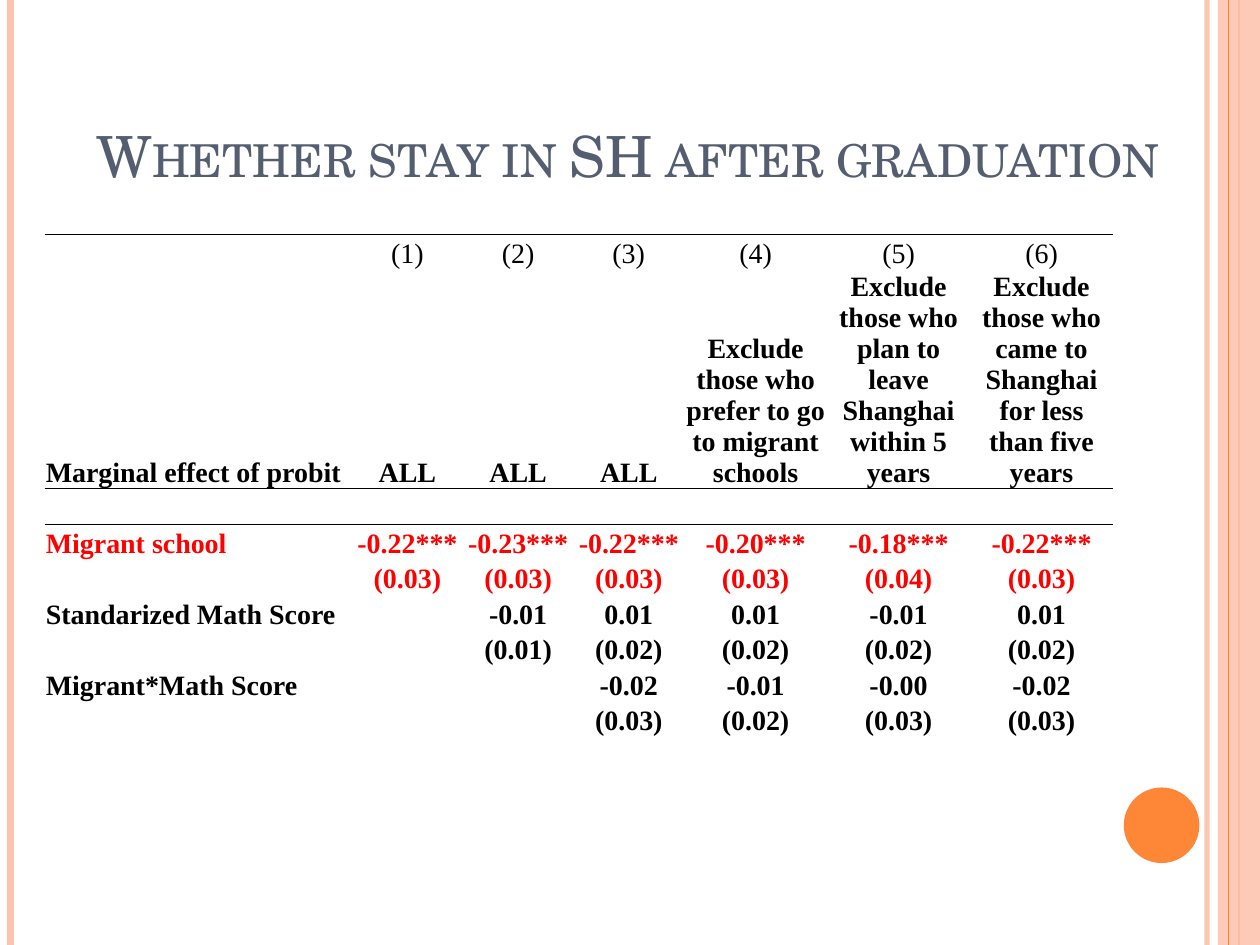
"""Build the slide on whether pupils stay in SH after graduation."""
from dataclasses import dataclass
from typing import Any

from lxml.etree import SubElement
from pptx import Presentation
from pptx.dml.color import RGBColor
from pptx.enum.shapes import MSO_CONNECTOR, MSO_SHAPE
from pptx.enum.text import MSO_ANCHOR, MSO_AUTO_SIZE, PP_ALIGN
from pptx.oxml import parse_xml
from pptx.oxml.ns import nsdecls, qn
from pptx.util import Pt


@dataclass(frozen=True)
class Theme:
    """Colours, fonts and type sizes."""
    pink: str = "FEC3AE"
    orange: str = "FE8637"
    slate: str = "545E70"
    black: str = "000000"
    red: str = "FF0000"
    head: str = "TeX Gyre Schola"
    body: str = "Times New Roman"
    large: float = 32.4
    small: float = 16


@dataclass(frozen=True)
class Rule:
    """A line from the top to the foot of the slide."""
    x: float
    color: str
    width: float
    alpha: int = 100


@dataclass(frozen=True)
class Row:
    """One table row with its style and border."""
    cells: tuple[str, ...]
    color: str
    bold: bool = True
    height: float = 20.16
    edge: str = ""


THEME = Theme()
WIDE, HIGH = 720, 540
BLANK = ("",)
COLS = (175.7,) + (63.25,) * 3 + (81.7,) * 3
RULES = (
    Rule(689.8, THEME.pink, 3, 93),
    Rule(6, THEME.pink, 4.5),
    Rule(708, THEME.orange, 1.5),
)
EDGE_RULE = Rule(702, THEME.orange, 0.75)
ROWS = (
    Row(BLANK + tuple(f"({n})" for n in range(1, 7)), THEME.black, bold=False, edge="T"),
    Row(("Marginal effect of probit", "ALL", "ALL", "ALL",
         "Exclude those who prefer to go to migrant schools",
         "Exclude those who plan to leave Shanghai within 5 years",
         "Exclude those who came to Shanghai for less than five years"),
        THEME.black, height=107.3, edge="B"),
    Row(BLANK * 7, THEME.black, edge="T"),
    Row(("Migrant school", "-0.22***", "-0.23***", "-0.22***",
         "-0.20***", "-0.18***", "-0.22***"), THEME.red),
    Row(("", "(0.03)", "(0.03)", "(0.03)", "(0.03)", "(0.04)", "(0.03)"), THEME.red),
    Row(("Standarized Math Score", "", "-0.01", "0.01", "0.01", "-0.01", "0.01"), THEME.black),
    Row(("", "", "(0.01)", "(0.02)", "(0.02)", "(0.02)", "(0.02)"), THEME.black),
    Row(("Migrant*Math Score", "", "", "-0.02", "-0.01", "-0.00", "-0.02"), THEME.black),
    Row(("", "", "", "(0.03)", "(0.02)", "(0.03)", "(0.03)"), THEME.black),
)


def fade(part: Any, alpha: int) -> None:
    """Set the opacity of a solid colour, in per cent."""
    if alpha < 100:
        color = next(part.iter(qn("a:srgbClr")))
        SubElement(color, qn("a:alpha"), val=str(alpha * 1000))


def write(frame: Any, text: str, *, font: str, size: float, color: str,
          bold: bool = False, caps: bool = False, align: PP_ALIGN = PP_ALIGN.LEFT) -> None:
    """Put one formatted paragraph in a text frame."""
    para = frame.paragraphs[0]
    para.alignment = align
    if not text:
        SubElement(para._p, qn("a:endParaRPr"), sz=str(int(size * 100)))
        return
    run = para.add_run()
    run.text = text
    run.font.name, run.font.size, run.font.bold = font, Pt(size), bold
    run.font.color.rgb = RGBColor.from_string(color)
    if caps:
        run.font._element.set("cap", "small")


def draw_rule(slide: Any, rule: Rule) -> Any:
    """Draw one upright line."""
    line = slide.shapes.add_connector(
        MSO_CONNECTOR.STRAIGHT, Pt(rule.x), 0, Pt(rule.x), Pt(HIGH))
    line.line.color.rgb = RGBColor.from_string(rule.color)
    line.line.width = Pt(rule.width)
    props = line._element.spPr
    fade(props, rule.alpha)
    SubElement(props, qn("a:effectLst"))
    return line


def draw_shape(slide: Any, kind: MSO_SHAPE, box: tuple[float, ...],
               color: str, alpha: int = 100) -> Any:
    """Draw a filled shape with no outline."""
    shape = slide.shapes.add_shape(kind, *map(Pt, box))
    shape.shadow.inherit = False
    shape.fill.solid()
    shape.fill.fore_color.rgb = RGBColor.from_string(color)
    shape.line.fill.background()
    fade(shape._element.spPr, alpha)
    return shape


def draw_edge(cell: Any, side: str) -> None:
    """Rule one side of a cell, T for top or B for bottom."""
    cell._tc.get_or_add_tcPr().insert(0, parse_xml(
        f'<a:ln{side} {nsdecls("a")} w="6350"><a:solidFill>'
        f'<a:srgbClr val="{THEME.black}"/></a:solidFill></a:ln{side}>'))


def draw_table(slide: Any, rows: tuple[Row, ...]) -> None:
    """Draw the table of results."""
    table = slide.shapes.add_table(
        len(rows), len(COLS), Pt(25.5), Pt(133.9), Pt(sum(COLS)),
        Pt(sum(row.height for row in rows))).table
    table.first_row = table.horz_banding = False
    style = next(table._tbl.iter(qn("a:tableStyleId")))
    style.text = "{2D5ABB26-0587-4C30-8999-92F81FD0307C}"
    for col, width in zip(table.columns, COLS):
        col.width = Pt(width)
    for r, row in enumerate(rows):
        table.rows[r].height = Pt(row.height)
        for c, text in enumerate(row.cells):
            cell = table.cell(r, c)
            cell.fill.background()
            cell.vertical_anchor = MSO_ANCHOR.BOTTOM
            cell.margin_left = cell.margin_right = cell.margin_top = Pt(0.7)
            cell.margin_bottom = 0
            write(cell.text_frame, text, font=THEME.body, size=THEME.small,
                  color=row.color, bold=row.bold,
                  align=PP_ALIGN.CENTER if c else PP_ALIGN.LEFT)
            if row.edge:
                draw_edge(cell, row.edge)


def draw_title(slide: Any, text: str) -> None:
    """Place and fill the title above the side bands."""
    title = slide.shapes.title
    title.left, title.top, title.width, title.height = map(Pt, (48, 21.6, 672, 90))
    frame = title.text_frame
    frame.auto_size = MSO_AUTO_SIZE.NONE
    frame.word_wrap = True
    frame.vertical_anchor = MSO_ANCHOR.BOTTOM
    write(frame, text, font=THEME.head, size=THEME.large, color=THEME.slate, caps=True)
    slide.shapes._spTree.append(title._element)


def main() -> None:
    """Build and save the deck."""
    deck = Presentation()
    deck.slide_width, deck.slide_height = Pt(WIDE), Pt(HIGH)
    slide = deck.slides.add_slide(deck.slide_layouts[5])
    lines = [draw_rule(slide, rule) for rule in RULES]
    band = draw_shape(slide, MSO_SHAPE.RECTANGLE, (696, 0, 24, HIGH), THEME.pink, 87)
    lines[-1].begin_connect(band, 0)
    lines[-1].end_connect(band, 2)
    draw_rule(slide, EDGE_RULE)
    draw_shape(slide, MSO_SHAPE.OVAL, (642.2, 450, 43.2, 43.2), THEME.orange)
    draw_title(slide, "Whether stay in SH after graduation")
    draw_table(slide, ROWS)
    deck.save("out.pptx")


if __name__ == "__main__":
    main()
